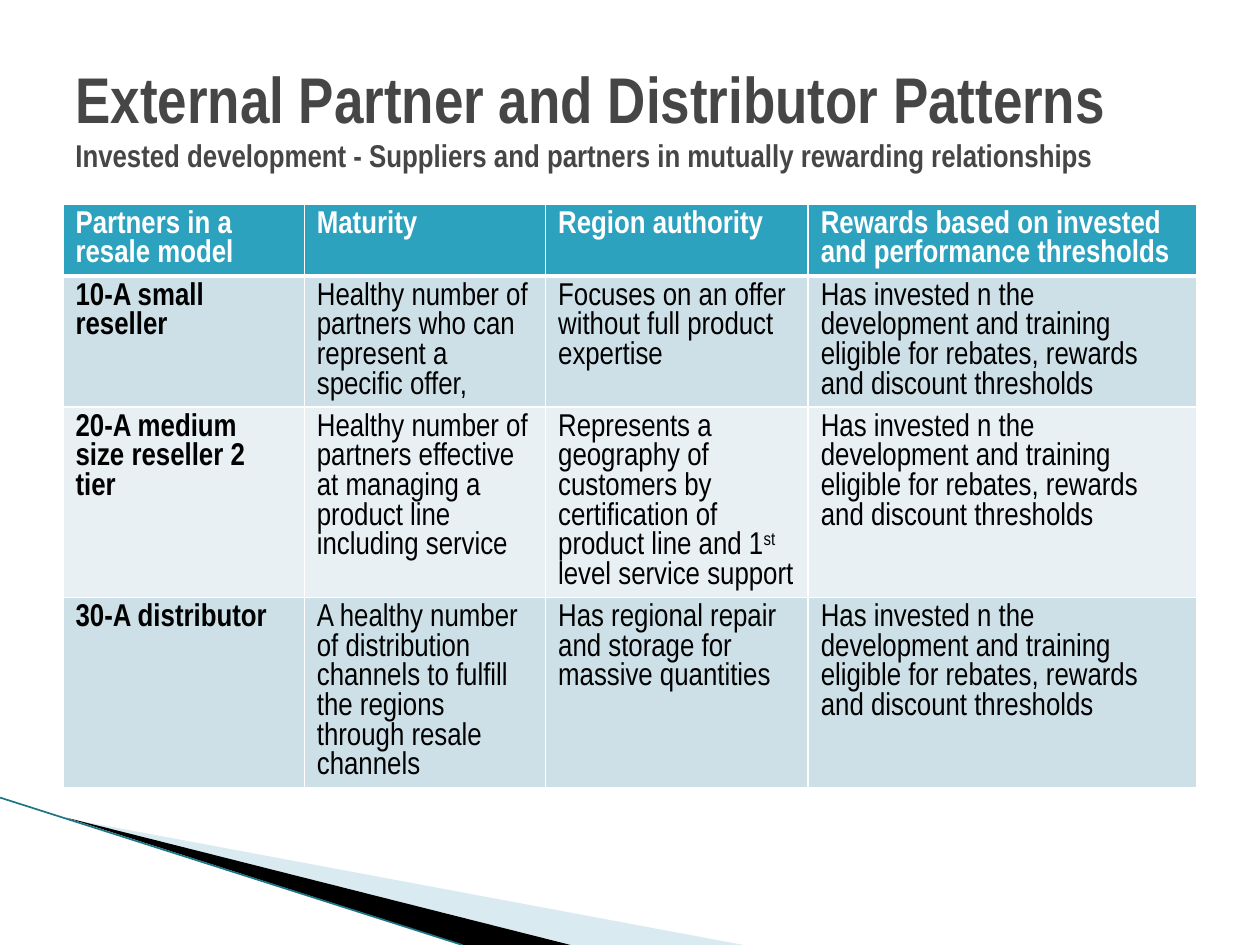
import pptx
import pptx.dml.color
import pptx.enum.shapes
import pptx.enum.text
import pptx.oxml
import pptx.oxml.ns
import pptx.util
from lxml import etree

WIDTH, HEIGHT = 10, 7.5
MARGIN = WIDTH / 20
CONTENT_WIDTH = WIDTH - 2 * MARGIN
FONT = "Arial Narrow"
WHITE, BLACK, GREY = "FFFFFF", "000000", "464646"
HEADER_FILL, BAND_FILLS = "2DA2BF", ("CDE0E8", "E8F0F4")
COLUMNS = (1.915, 1.915, 2.085, 3.085)
ROW_HEIGHT = 0.41

REWARDS = ("Has invested n the development and training eligible for rebates, "
           "rewards and discount thresholds")
# A cell given as a tuple alternates normal and superscript spans
ROWS = (
    ("Partners in a resale model", "Maturity", "Region authority",
     "Rewards based on invested and performance thresholds"),
    ("10-A small reseller",
     "Healthy number of partners who can represent a specific offer,",
     "Focuses on an offer without full product expertise", REWARDS),
    ("20-A medium size reseller 2 tier",
     "Healthy number of partners effective at managing a product line including service",
     ("Represents a geography of customers by certification of product line and 1",
      "st", " level service support"), REWARDS),
    ("30-A distributor",
     "A healthy number of distribution channels to fulfill the regions through resale channels",
     "Has regional repair and storage for massive quantities", REWARDS),
)


def inches(value):
    return pptx.util.Inches(value)


def colour(hex_string):
    return pptx.dml.color.RGBColor.from_string(hex_string)


def paint(fill, hex_string):
    fill.solid()
    fill.fore_color.rgb = colour(hex_string)


def add_span(para, text, size, hex_string, bold):
    span = para.add_run()
    span.text = text
    values = {"name": FONT, "size": pptx.util.Pt(size), "bold": bold}
    for name, value in values.items():
        setattr(span.font, name, value)
    span.font.color.rgb = colour(hex_string)
    return span


def add_wedge(page, points, hex_string, opacity=100):
    corners = [(inches(x), inches(y)) for x, y in points]
    builder = page.shapes.build_freeform(*corners[0])
    builder.add_line_segments(corners[1:], close=True)
    wedge = builder.convert_to_shape()
    wedge.shadow.inherit = False
    wedge.line.fill.background()
    paint(wedge.fill, hex_string)
    if opacity < 100:
        tint = wedge.fill._xPr.find(".//" + pptx.oxml.ns.qn("a:srgbClr"))
        etree.SubElement(tint, pptx.oxml.ns.qn("a:alpha"), val=str(opacity * 1000))


def add_line(page, start, end, hex_string, width):
    line = page.shapes.add_connector(
        pptx.enum.shapes.MSO_CONNECTOR.STRAIGHT,
        *(inches(value) for value in (*start, *end)))
    line.line.color.rgb = colour(hex_string)
    line.line.width = pptx.util.Pt(width)
    etree.SubElement(line._element.spPr, pptx.oxml.ns.qn("a:effectLst"))


def add_title(page, heading, subtitle):
    box = page.shapes.add_textbox(inches(MARGIN), inches(HEIGHT * 0.04),
                                  inches(CONTENT_WIDTH), inches(HEIGHT / 6))
    box.text_frame.word_wrap = True
    box.text_frame.vertical_anchor = pptx.enum.text.MSO_ANCHOR.MIDDLE
    para = box.text_frame.paragraphs[0]
    add_span(para, heading, 36.9, GREY, True)
    para.add_line_break()
    add_span(para, subtitle, 18, GREY, True)


def add_borders(cell, bottom_width, top_width):
    properties = cell._tc.get_or_add_tcPr()
    sides = {"lnL": 1, "lnR": 1, "lnT": top_width, "lnB": bottom_width}
    for index, (side, width) in enumerate(sides.items()):
        border = pptx.oxml.parse_xml(
            f'<a:{side} {pptx.oxml.ns.nsdecls("a")} w="{pptx.util.Pt(width)}">'
            f'<a:solidFill><a:srgbClr val="{WHITE}"/></a:solidFill></a:{side}>')
        properties.insert(index, border)


def fill_cell(cell, content, row, column):
    header = row == 0
    paint(cell.fill, HEADER_FILL if header else BAND_FILLS[(row - 1) % 2])
    add_borders(cell, 3 if header else 1, 3 if row == 1 else 1)
    para = cell.text_frame.paragraphs[0]
    parts = (content,) if isinstance(content, str) else content
    for index, part in enumerate(parts):
        span = add_span(para, part, 18, WHITE if header else BLACK,
                        header or column == 0)
        if index % 2:
            span._r.get_or_add_rPr().set("baseline", "30000")


def add_partner_table(page):
    frame = page.shapes.add_table(
        len(ROWS), len(COLUMNS), inches(MARGIN), inches(1.62),
        inches(CONTENT_WIDTH), inches(ROW_HEIGHT * len(ROWS)))
    table = frame.table
    for column, width in zip(table.columns, COLUMNS):
        column.width = inches(round(width, 3))
    for row, contents in enumerate(ROWS):
        table.rows[row].height = inches(ROW_HEIGHT)
        for column, content in enumerate(contents):
            fill_cell(table.cell(row, column), content, row, column)


def main():
    deck = pptx.Presentation()
    deck.slide_width, deck.slide_height = inches(WIDTH), inches(HEIGHT)
    page = deck.slides.add_slide(deck.slide_layouts[6])
    # Corner decoration
    add_wedge(page, ((0.55, 6.5), (5.9, HEIGHT), (4.53, HEIGHT)), "A0CBDC", 40)
    add_wedge(page, ((0.53, 6.49), (4.53, HEIGHT), (3.68, HEIGHT)), BLACK)
    add_line(page, (0, 6.33), (3.67, HEIGHT), "1B7587", 0.95)
    # Content
    add_partner_table(page)
    add_title(page, "External Partner and Distributor Patterns",
              "Invested development - Suppliers and partners in mutually "
              "rewarding relationships")
    deck.save("out.pptx")


if __name__ == "__main__":
    main()
